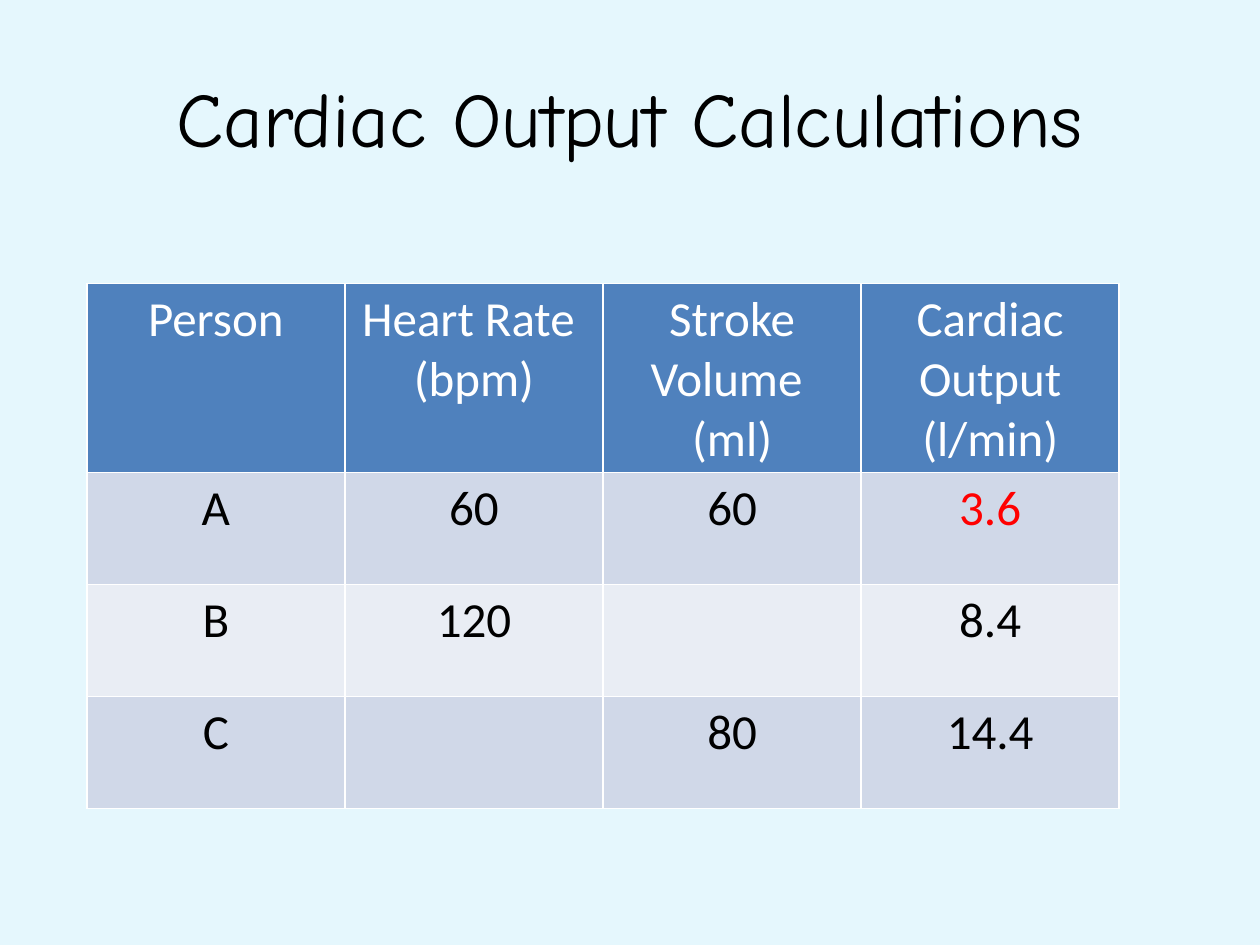
"""Build a slide with a table of cardiac output calculations."""
from dataclasses import dataclass

from pptx import Presentation
from pptx.dml.color import RGBColor
from pptx.enum.text import MSO_ANCHOR, PP_ALIGN
from pptx.util import Pt


@dataclass(frozen=True)
class Theme:
    background: str = "E5F7FD"
    header: str = "4F81BD"
    bands: tuple = ("D0D8E8", "E9EDF4")
    light: str = "FFFFFF"
    dark: str = "000000"
    answer: str = "FF0000"
    title_font: str = "Comic Neue"
    table_font: str = "Calibri"
    title_size: int = 44
    table_size: int = 28


def style_text(frame, font, size, color):
    for para in frame.paragraphs:
        para.alignment = PP_ALIGN.CENTER
        para.font.size = Pt(size)
        for span in para.runs:
            span.font.name = font
            span.font.size = Pt(size)
            span.font.bold = False
            span.font.color.rgb = RGBColor.from_string(color)


theme = Theme()
deck = Presentation()
deck.slide_width, deck.slide_height = Pt(720), Pt(540)
page = deck.slides.add_slide(deck.slide_layouts[6])
page.background.fill.solid()
page.background.fill.fore_color.rgb = RGBColor.from_string(theme.background)

title = page.shapes.add_textbox(Pt(36), Pt(21.6), Pt(648), Pt(90))
title.text_frame.word_wrap = True
title.text_frame.vertical_anchor = MSO_ANCHOR.MIDDLE
title.text_frame.text = "Cardiac Output Calculations"
style_text(title.text_frame, theme.title_font, theme.title_size, theme.dark)

rows = [
    ["Person", "Heart Rate \n(bpm)", "Stroke Volume \n(ml)", "Cardiac Output\n(l/min)"],
    ["A", "60", "60", "3.6"],
    ["B", "120", "", "8.4"],
    ["C", "", "80", "14.4"],
]
answer_cell = (1, 3)

table_frame = page.shapes.add_table(
    len(rows), len(rows[0]), Pt(49.6), Pt(162), Pt(590), Pt(300)
)
table = table_frame.table
for column in table.columns:
    column.width = Pt(147.5)

for row_index, values in enumerate(rows):
    table.rows[row_index].height = Pt(64)
    fill = theme.bands[(row_index - 1) % 2] if row_index else theme.header
    for column_index, value in enumerate(values):
        cell = table.cell(row_index, column_index)
        cell.fill.solid()
        cell.fill.fore_color.rgb = RGBColor.from_string(fill)
        cell.text_frame.text = value
        color = theme.dark if row_index else theme.light
        if (row_index, column_index) == answer_cell:
            color = theme.answer
        style_text(cell.text_frame, theme.table_font, theme.table_size, color)

table_frame.height = Pt(300)
deck.save("out.pptx")
